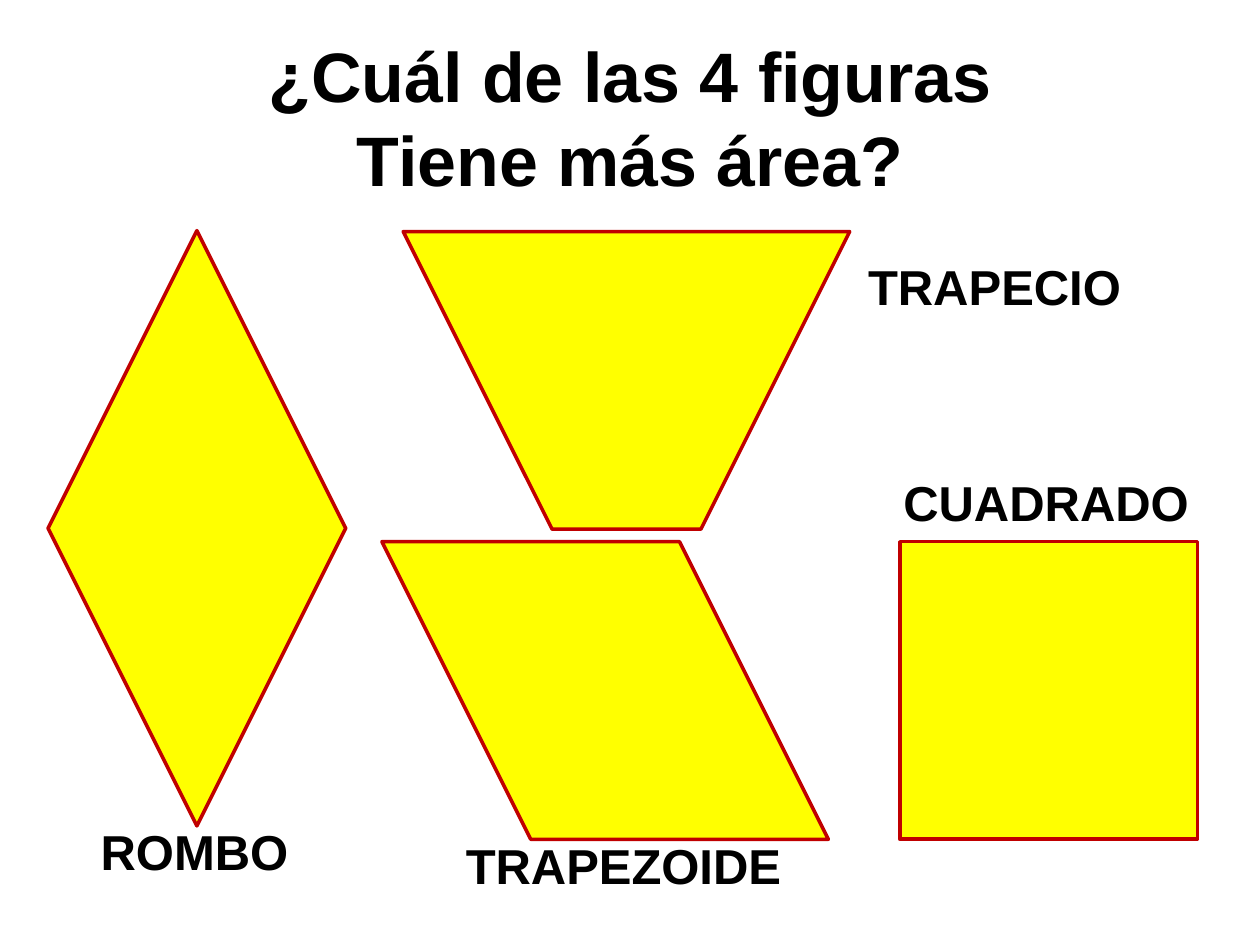
from pptx import Presentation
from pptx.dml.color import RGBColor
from pptx.enum.shapes import MSO_SHAPE
from pptx.enum.text import MSO_ANCHOR, MSO_AUTO_SIZE, PP_ALIGN
from pptx.util import Cm, Pt

# Content: all lengths in cm
SIDE = 6
LOWER_ROW = 10.92
QUESTION = ["¿Cuál de las 4 figuras", "Tiene más área?"]
FIGURES = [
    # preset, left, top, width, height, flip attribute
    (MSO_SHAPE.TRAPEZOID, 8.13, 4.67, 1.5 * SIDE, SIDE, "flipV"),
    (MSO_SHAPE.DIAMOND, 0.97, 4.65, SIDE, 2 * SIDE, None),
    (MSO_SHAPE.RECTANGLE, 18.14, LOWER_ROW, SIDE, SIDE, None),
    (MSO_SHAPE.PARALLELOGRAM, 7.7, LOWER_ROW, 1.5 * SIDE, SIDE, "flipH"),
]
LABELS = [
    # name, left, top, width
    ("TRAPEZOIDE", 9.14, 16.71, 6.96),
    ("CUADRADO", 17.96, 9.4, 6.55),
    ("ROMBO", 1.78, 16.43, 4.55),
    ("TRAPECIO", 17.25, 5.05, 5.66),
]
LABEL_HEIGHT = 1.45
THEME = {
    "font": "Arial",
    "title_size": Pt(40),
    "label_size": Pt(28),
    "text": RGBColor(0, 0, 0),
    "fill": RGBColor(0xFF, 0xFF, 0),
    "outline": RGBColor(0xC0, 0, 0),
    "outline_width": Pt(2),
}


def write(paragraph, words, size):
    paragraph.text = words
    paragraph.font.name = THEME["font"]
    paragraph.font.size = size
    paragraph.font.bold = True
    paragraph.font.color.rgb = THEME["text"]


def add_figure(slide, preset, left, top, width, height, flip):
    figure = slide.shapes.add_shape(preset, Cm(left), Cm(top), Cm(width), Cm(height))
    figure.shadow.inherit = False
    figure.fill.solid()
    figure.fill.fore_color.rgb = THEME["fill"]
    figure.line.color.rgb = THEME["outline"]
    figure.line.width = THEME["outline_width"]
    if flip:
        figure.adjustments[0] = 0.5
        figure.element.spPr.get_or_add_xfrm().set(flip, "1")


def add_label(slide, name, left, top, width):
    label = slide.shapes.add_textbox(Cm(left), Cm(top), Cm(width), Cm(LABEL_HEIGHT))
    label.text_frame.word_wrap = False
    label.text_frame.auto_size = MSO_AUTO_SIZE.SHAPE_TO_FIT_TEXT
    write(label.text_frame.paragraphs[0], name, THEME["label_size"])


def main():
    presentation = Presentation()
    presentation.slide_width, presentation.slide_height = Cm(25.4), Cm(19.05)
    slide = presentation.slides.add_slide(presentation.slide_layouts[5])

    # Question
    title = slide.shapes.title
    title.left, title.top, title.width, title.height = Cm(1.27), Cm(0.76), Cm(22.86), Cm(3.18)
    frame = title.text_frame
    frame.word_wrap = True
    frame.auto_size = MSO_AUTO_SIZE.NONE
    frame.vertical_anchor = MSO_ANCHOR.MIDDLE
    for index, line in enumerate(QUESTION):
        paragraph = frame.add_paragraph() if index else frame.paragraphs[0]
        write(paragraph, line, THEME["title_size"])
        paragraph.alignment = PP_ALIGN.CENTER

    # Figures and their names
    for figure in FIGURES:
        add_figure(slide, *figure)
    for label in LABELS:
        add_label(slide, *label)

    presentation.save("out.pptx")


if __name__ == "__main__":
    main()
